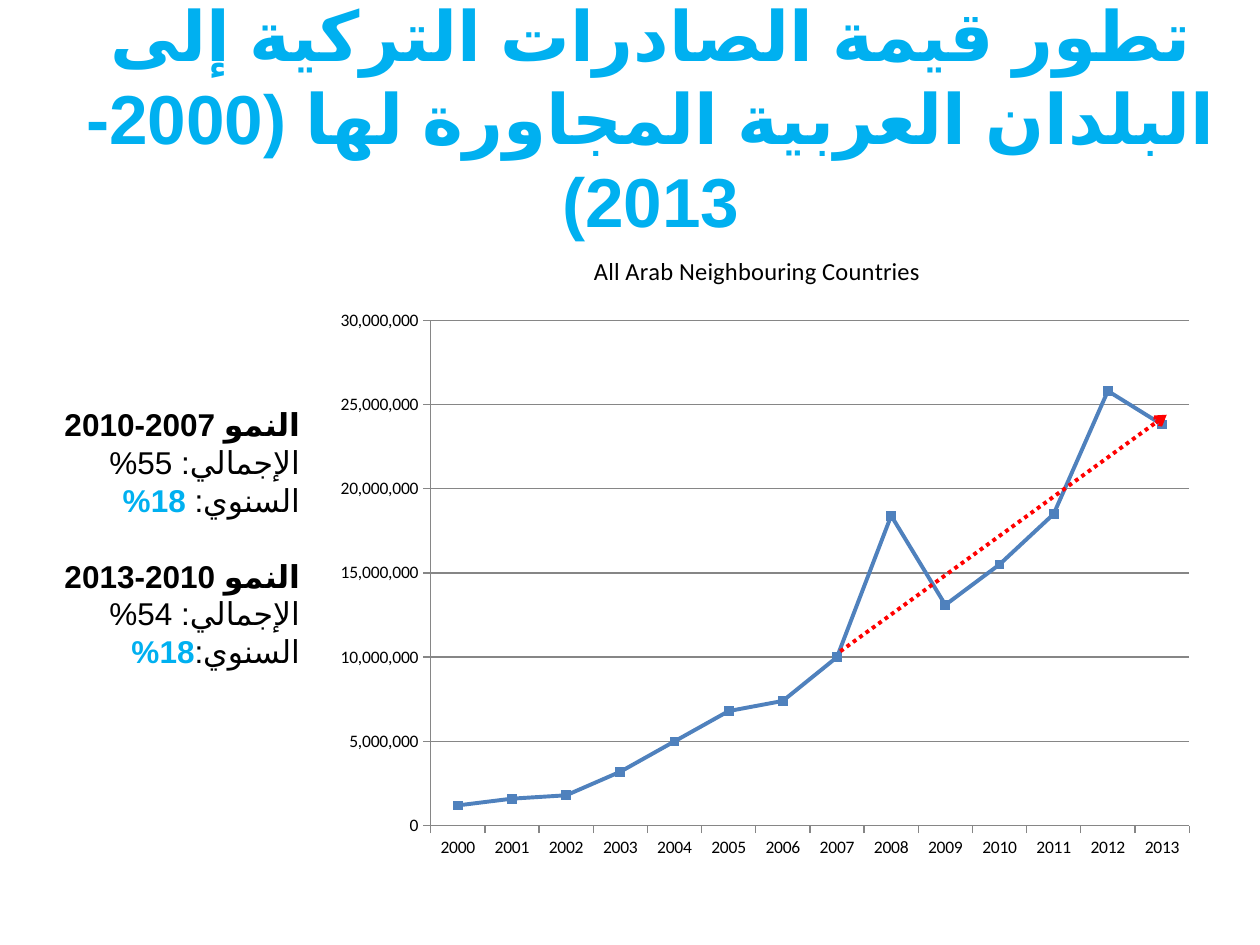
from lxml import etree
from pptx import Presentation
from pptx.chart.data import CategoryChartData
from pptx.dml.color import RGBColor
from pptx.enum.chart import XL_CHART_TYPE, XL_MARKER_STYLE, XL_TICK_MARK
from pptx.enum.dml import MSO_LINE
from pptx.enum.lang import MSO_LANGUAGE_ID
from pptx.enum.shapes import MSO_CONNECTOR
from pptx.enum.text import MSO_ANCHOR, PP_ALIGN
from pptx.oxml.ns import qn
from pptx.util import Cm, Pt

LINE_MARKERS = XL_CHART_TYPE.LINE_MARKERS
SQUARE = XL_MARKER_STYLE.SQUARE
CROSS, OUTSIDE = XL_TICK_MARK.CROSS, XL_TICK_MARK.OUTSIDE
DOTTED = MSO_LINE.ROUND_DOT
STRAIGHT = MSO_CONNECTOR.STRAIGHT
TOP, MIDDLE = MSO_ANCHOR.TOP, MSO_ANCHOR.MIDDLE
CENTER, RIGHT = PP_ALIGN.CENTER, PP_ALIGN.RIGHT
ARABIC = MSO_LANGUAGE_ID.ARABIC

SKY = RGBColor(0x00, 0xB0, 0xF0)
BLACK = RGBColor(0x00, 0x00, 0x00)
BLUE = RGBColor(0x4F, 0x81, 0xBD)
RED = RGBColor(0xFF, 0x00, 0x00)
GREY = RGBColor(0x86, 0x86, 0x86)
FONT, ARABIC_FONT = "Calibri", "Arial"

# Content
HEADLINE = "تطور قيمة الصادرات التركية إلى البلدان العربية المجاورة لها (2000-2013)"
GROWTH = [  # period, total, annual label, annual rate
    ("النمو 2007-2010", "الإجمالي:\t 55%", "السنوي:\t", " 18%"),
    ("النمو 2010-2013", "الإجمالي: \t54%", "السنوي:\t", "18%"),
]
EXPORTS_NAME = "All Arab Neighbouring Countries"
FIRST_YEAR = 2000
EXPORTS_MILLIONS = [1.2, 1.6, 1.8, 3.2, 5, 6.8, 7.4, 10, 18.4, 13.1, 15.5, 18.5, 25.8, 23.8]

# Places in cm: left, top, width, height
HEADLINE_BOX = (1.27, 0.76, 23.7, 3.18)
GROWTH_BOX = (0, 8.05, 6.3, 5.64)
CHART_BOX = (6.55, 4.65, 17.78, 12.9)
TREND_ENDS = (16.94, 13.13, 23.52, 8.36)

# Places inside the chart, as shares of its size
TITLE_PLACE = dict(xMode="edge", yMode="edge", x=0.3, y=0.03)
PLOT_PLACE = dict(layoutTarget="inner", xMode="edge", yMode="edge", x=0.12, y=0.14, w=0.86, h=0.79)

# Formats
HEADLINE_FORMAT = dict(name=FONT, size=Pt(39.6), bold=True, language_id=ARABIC)
STRONG = dict(HEADLINE_FORMAT, size=Pt(18))
PLAIN = dict(STRONG, bold=False)
BLOCK_GAP = Pt(21.6)


def apply(target, values):
    for attribute, value in values.items():
        setattr(target, attribute, value)


def add_text(slide, box, anchor, align, paragraphs):
    """Each paragraph is (space before, [(text, format, colour), ...])."""
    frame = slide.shapes.add_textbox(*map(Cm, box)).text_frame
    apply(frame, dict(word_wrap=True, vertical_anchor=anchor))
    for index, (gap, runs) in enumerate(paragraphs):
        paragraph = frame.add_paragraph() if index else frame.paragraphs[0]
        apply(paragraph, dict(alignment=align, space_before=gap))
        paragraph._p.get_or_add_pPr().set("rtl", "1")
        for text, values, colour in runs:
            run = paragraph.add_run()
            run.text = text
            apply(run.font, values)
            run.font.color.rgb = colour
            etree.SubElement(run._r.get_or_add_rPr(), qn("a:cs"), typeface=ARABIC_FONT)


def place_in_chart(part, index, place):
    for old in part.findall(qn("c:layout")):
        part.remove(old)
    layout = etree.Element(qn("c:layout"))
    manual = etree.SubElement(layout, qn("c:manualLayout"))
    for key, value in place.items():
        etree.SubElement(manual, qn(f"c:{key}"), val=str(value))
    part.insert(index, layout)


def add_exports_chart(slide):
    data = CategoryChartData(number_format="#,##0")
    data.categories = [str(FIRST_YEAR + i) for i in range(len(EXPORTS_MILLIONS))]
    data.add_series(EXPORTS_NAME, [round(value * 1_000_000) for value in EXPORTS_MILLIONS])
    chart = slide.shapes.add_chart(LINE_MARKERS, *map(Cm, CHART_BOX), data).chart
    apply(chart, dict(has_legend=False, has_title=True))
    apply(chart.font, dict(name=FONT, size=Pt(10)))
    chart.font.color.rgb = BLACK

    chart_title = chart.chart_title.text_frame
    chart_title.text = EXPORTS_NAME
    title_font = chart_title.paragraphs[0].runs[0].font
    apply(title_font, dict(name=FONT, size=Pt(14), bold=False))
    title_font.color.rgb = BLACK
    place_in_chart(chart.chart_title._element, 1, TITLE_PLACE)
    place_in_chart(chart._chartSpace.chart.plotArea, 0, PLOT_PLACE)

    values, years = chart.value_axis, chart.category_axis
    apply(values, dict(minimum_scale=0, maximum_scale=30_000_000, major_unit=5_000_000))
    apply(values.tick_labels, dict(number_format="#,##0", number_format_is_linked=False))
    for axis, tick in ((values, CROSS), (years, OUTSIDE)):
        axis.major_tick_mark = tick
        axis.format.line.color.rgb = GREY
    values.major_gridlines.format.line.color.rgb = GREY

    plot = chart.plots[0]
    plot.vary_by_categories = False
    exports = plot.series[0]
    exports.smooth = False
    exports.format.line.width = Pt(2.25)
    exports.format.line.color.rgb = BLUE
    apply(exports.marker, dict(style=SQUARE, size=5))
    exports.marker.format.fill.solid()
    exports.marker.format.fill.fore_color.rgb = BLUE
    exports.marker.format.line.color.rgb = BLUE


def add_trend_arrow(slide):
    trend = slide.shapes.add_connector(STRAIGHT, *map(Cm, TREND_ENDS))
    apply(trend.line, dict(width=Pt(2.25), dash_style=DOTTED))
    trend.line.color.rgb = RED
    etree.SubElement(trend.line._get_or_add_ln(), qn("a:tailEnd"), type="arrow")
    etree.SubElement(trend._element.spPr, qn("a:effectLst"))


def main():
    deck = Presentation()
    apply(deck, dict(slide_width=Cm(25.4), slide_height=Cm(19.05)))
    slide = deck.slides.add_slide(deck.slide_layouts[6])

    # Headline
    add_text(slide, HEADLINE_BOX, MIDDLE, CENTER, [(Pt(0), [(HEADLINE, HEADLINE_FORMAT, SKY)])])

    # Growth figures
    lines = []
    for block, (period, total, annual, rate) in enumerate(GROWTH):
        lines += [
            (BLOCK_GAP if block else Pt(0), [(period, STRONG, BLACK)]),
            (Pt(0), [(total, PLAIN, BLACK)]),
            (Pt(0), [(annual, PLAIN, BLACK), (rate, STRONG, SKY)]),
        ]
    add_text(slide, GROWTH_BOX, TOP, RIGHT, lines)

    # Exports and their trend
    add_exports_chart(slide)
    add_trend_arrow(slide)
    deck.save("out.pptx")


if __name__ == "__main__":
    main()
